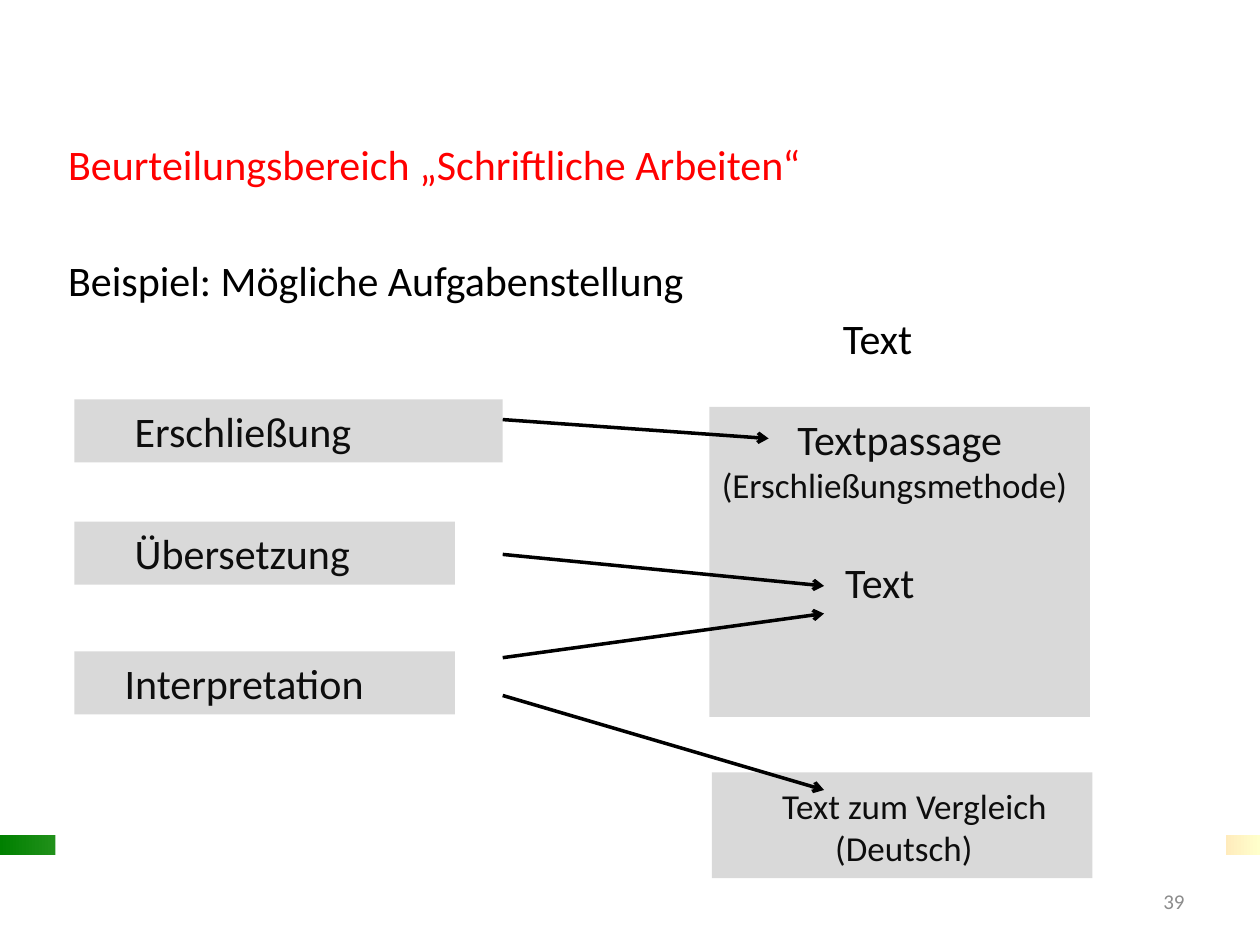
"""Build the slide on text tasks and the passages they refer to."""
from lxml import etree
from pptx import Presentation
from pptx.dml.color import RGBColor
from pptx.enum.shapes import MSO_CONNECTOR, MSO_SHAPE
from pptx.enum.text import MSO_ANCHOR, MSO_AUTO_SIZE, PP_ALIGN
from pptx.oxml.ns import qn
from pptx.util import Inches, Pt

RECT = MSO_SHAPE.RECTANGLE
LINE = MSO_CONNECTOR.STRAIGHT
TOP, MID = MSO_ANCHOR.TOP, MSO_ANCHOR.MIDDLE
LEFT, RIGHT = PP_ALIGN.LEFT, PP_ALIGN.RIGHT
FIXED = MSO_AUTO_SIZE.NONE


def rgb(code):
    """Turn a hex string into a colour."""
    return RGBColor.from_string(code)


def write(shape, rows):
    """Fill a shape with rows of text, indent, size, colour and space before."""
    frame = shape.text_frame
    frame.text = "\n".join(row[0] for row in rows)
    frame.word_wrap = True
    frame.auto_size = FIXED
    frame.vertical_anchor = TOP
    for para, (text, indent, size, color, gap) in zip(frame.paragraphs, rows):
        props = para._p.get_or_add_pPr()
        props.set("marL", str(Inches(indent)))
        props.set("indent", "0")
        etree.SubElement(props, qn("a:buNone"))
        para.alignment = LEFT
        para.space_before = Pt(gap)
        font = para.runs[0].font
        font.name = "Calibri"
        font.size = Pt(size)
        font.color.rgb = rgb(color)


prs = Presentation()
prs.slide_width, prs.slide_height = Inches(10), Inches(7.5)
slide = prs.slides.add_slide(prs.slide_layouts[1])
shapes = slide.shapes
title = shapes.title._element
title.getparent().remove(title)
body = slide.placeholders[1]

bars = [(0, "008000", "FFFFCC", 0), (6.73, "FFFFCC", "FF0000", 180)]
for left, start, end, angle in bars:
    bar = shapes.add_shape(RECT, Inches(left), Inches(6.63), Inches(3.27), Inches(0.16))
    bar.shadow.inherit = False
    bar.line.fill.background()
    bar.fill.gradient()
    bar.fill.gradient_angle = angle
    for stop, color in zip(bar.fill.gradient_stops, (start, end)):
        stop.color.rgb = rgb(color)

shapes._spTree.append(body._element)
body.left, body.top = Inches(0.44), Inches(1.05)
body.width, body.height = Inches(9.29), Inches(6.16)
body.fill.solid()
body.fill.fore_color.rgb = rgb("FFFFFF")
write(body, [
    ("Beurteilungsbereich „Schriftliche Arbeiten“", 0, 24, "FF0000", 0),
    ("Beispiel: Mögliche Aufgabenstellung", 0, 24, "000000", 37.5),
    ("Text", 6.15, 24, "000000", 4),
])

INK = "0D0D0D"
boxes = [
    (0.59, 3.17, 3.4, 0.5, 0.05, [("Erschließung", 0.38, 24, INK, 0)]),
    (0.59, 4.14, 3.02, 0.5, 0.05, [("Übersetzung", 0.38, 24, INK, 0)]),
    (0.59, 5.17, 3.02, 0.5, 0.05, [("Interpretation", 0.3, 24, INK, 0)]),
    (5.63, 3.23, 3.02, 2.46, 0.05, [
        ("Textpassage", 0.6, 24, INK, 0),
        ("(Erschließungsmethode)", 0, 20, INK, 0),
        ("Text", 0.98, 24, INK, 29),
    ]),
    (5.65, 6.13, 3.02, 0.84, 0.1, [
        ("Text zum Vergleich", 0.46, 20, INK, 0),
        ("(Deutsch)", 0.88, 20, INK, 0),
    ]),
]
for left, top, width, height, inset, rows in boxes:
    box = shapes.add_shape(RECT, Inches(left), Inches(top), Inches(width), Inches(height))
    box.shadow.inherit = False
    box.line.fill.background()
    box.fill.solid()
    box.fill.fore_color.rgb = rgb("D9D9D9")
    write(box, rows)
    box.text_frame.margin_top = Inches(inset)

arrows = [(3.33, 6.1, 3.48), (4.4, 6.54, 4.65), (5.22, 6.54, 4.87), (5.52, 6.54, 6.27)]
for start, right, end in arrows:
    arrow = shapes.add_connector(LINE, Inches(3.99), Inches(start), Inches(right), Inches(end))
    arrow.line.width = Pt(2)
    arrow.line.color.rgb = rgb("000000")
    etree.SubElement(arrow.line._get_or_add_ln(), qn("a:tailEnd"), type="arrow")
    etree.SubElement(arrow._element.spPr, qn("a:effectLst"))

num = shapes.add_textbox(Inches(8.86), Inches(6.95), Inches(0.64), Inches(0.4))
write(num, [("39", 0, 12, "8C8C8C", 0)])
num.text_frame.vertical_anchor = MID
num.text_frame.paragraphs[0].alignment = RIGHT

prs.save("out.pptx")
